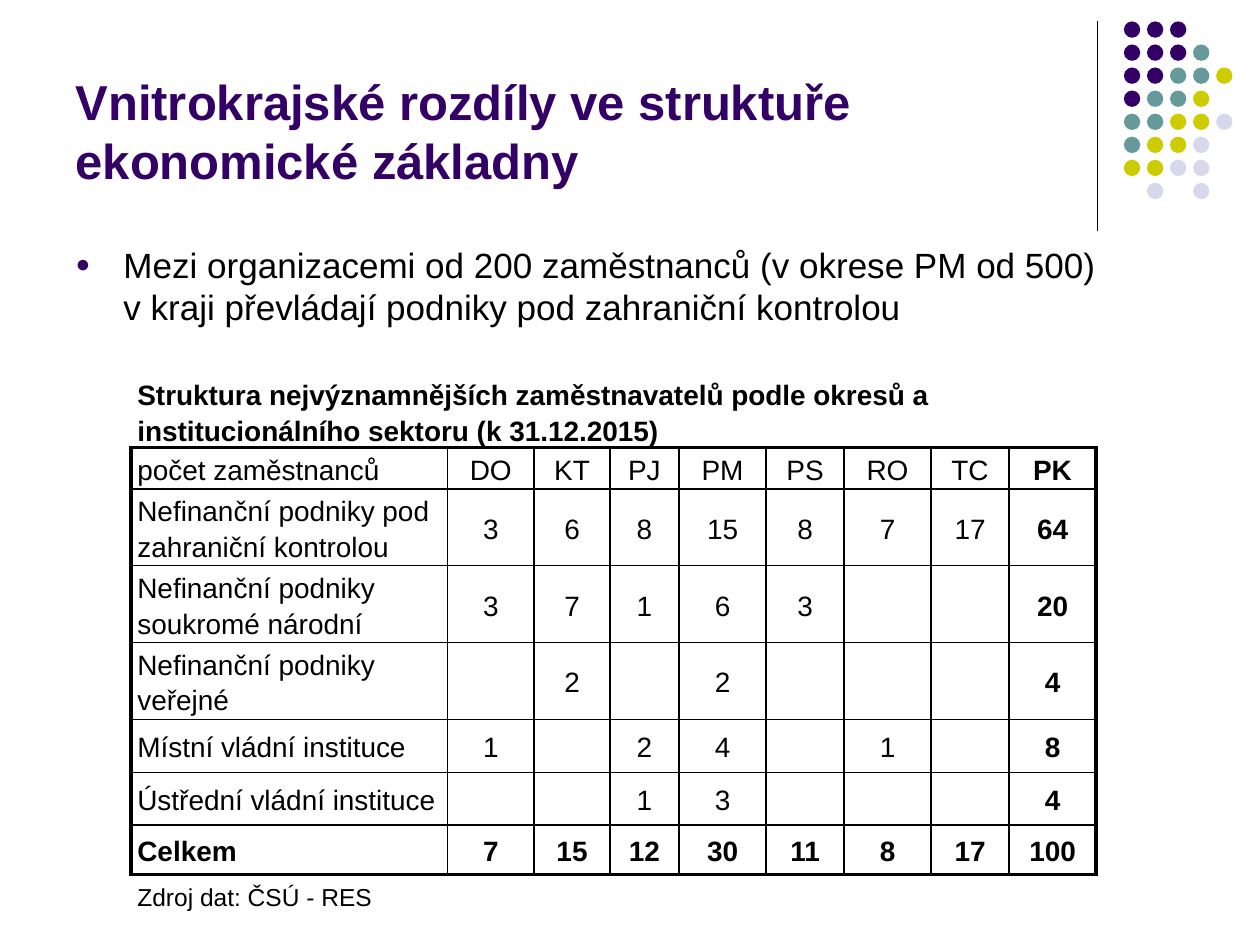
import lxml.etree
import pptx
import pptx.dml.color
import pptx.enum.shapes
import pptx.enum.text
import pptx.oxml.ns
import pptx.util

Inches = pptx.util.Inches
Pt = pptx.util.Pt
ALIGN = pptx.enum.text.PP_ALIGN
ANCHOR = pptx.enum.text.MSO_ANCHOR

COLORS = {
    "purple": "330066",
    "teal": "669999",
    "yellow": "CCCC00",
    "lavender": "D8D8EC",
    "black": "000000",
}
DOT_COLORS = {"P": "purple", "T": "teal", "Y": "yellow", "L": "lavender"}
DOT_ROWS = ["PPP", "PPPT", "PPTTY", "PTTY", "TTYYL", "TYYL", "YYLL", " L L"]
TITLE = "Vnitrokrajské rozdíly ve struktuře ekonomické základny"
BODY = (
    "Mezi organizacemi od 200 zaměstnanců (v okrese PM od 500) "
    "v kraji převládají podniky pod zahraniční kontrolou"
)
CAPTION = (
    "Struktura nejvýznamnějších zaměstnavatelů podle okresů "
    "a institucionálního sektoru (k 31.12.2015)"
)
SOURCE = "Zdroj dat: ČSÚ - RES"
TABLE_ROWS = [
    [CAPTION],
    ["počet zaměstnanců", "DO", "KT", "PJ", "PM", "PS", "RO", "TC", "PK"],
    ["Nefinanční podniky pod zahraniční kontrolou", "3", "6", "8", "15", "8", "7", "17", "64"],
    ["Nefinanční podniky soukromé národní", "3", "7", "1", "6", "3", "", "", "20"],
    ["Nefinanční podniky veřejné", "", "2", "", "2", "", "", "", "4"],
    ["Místní vládní instituce", "1", "", "2", "4", "", "1", "", "8"],
    ["Ústřední vládní instituce", "", "", "1", "3", "", "", "", "4"],
    ["Celkem", "7", "15", "12", "30", "11", "8", "17", "100"],
    [SOURCE],
]
COLUMN_WIDTHS = [2.51, 0.69, 0.6, 0.55, 0.69, 0.62, 0.69, 0.62, 0.69]
ROW_HEIGHTS = [0.68, 0.33, 0.61, 0.61, 0.61, 0.42, 0.42, 0.39, 0.3]
THIN, THICK = 1, 2.25


def rgb(name):
    """Return the named colour."""
    return pptx.dml.color.RGBColor.from_string(COLORS[name])


def set_values(target, values):
    """Set every attribute in a dict of format values."""
    for name, value in values.items():
        setattr(target, name, value)


def add_element(parent, tag, **attributes):
    """Append a drawing element with its attributes."""
    element = lxml.etree.SubElement(parent, pptx.oxml.ns.qn(tag))
    for name, value in attributes.items():
        element.set(name, str(value))
    return element


def write_text(paragraph, text, size, color="black", bold=False):
    """Add one formatted run to a paragraph."""
    run = paragraph.add_run()
    run.text = text
    set_values(run.font, {"name": "Arial", "size": Pt(size), "bold": bold})
    run.font.color.rgb = rgb(color)


def place(shape, box):
    """Move a shape to a box of left, top, width and height."""
    set_values(shape, dict(zip(("left", "top", "width", "height"), box)))


def fill_title(slide, box):
    """Fill and place the title."""
    title = slide.shapes.title
    place(title, box)
    title.text_frame.vertical_anchor = ANCHOR.BOTTOM
    paragraph = title.text_frame.paragraphs[0]
    paragraph.alignment = ALIGN.LEFT
    write_text(paragraph, TITLE, 28, "purple", True)


def fill_body(slide, box):
    """Fill and place the bulleted body."""
    body = slide.placeholders[1]
    place(body, box)
    paragraph = body.text_frame.paragraphs[0]
    paragraph.space_before = Pt(4)
    write_text(paragraph, BODY, 20)
    properties = paragraph._p.get_or_add_pPr()
    properties.set("marL", str(Inches(0.38)))
    properties.set("indent", str(Inches(-0.38)))
    bullet_color = add_element(properties, "a:buClr")
    add_element(bullet_color, "a:srgbClr", val=COLORS["purple"])
    add_element(properties, "a:buSzPct", val=70000)
    add_element(properties, "a:buFont", typeface="Arial")
    add_element(properties, "a:buChar", char="●")


def add_dots(slide, left, top):
    """Draw the grouped grid of coloured dots."""
    group = slide.shapes.add_group_shape()
    pitch, size = Inches(0.183), Inches(0.13)
    for row, codes in enumerate(DOT_ROWS):
        for column, code in enumerate(codes):
            if code not in DOT_COLORS:
                continue
            dot = group.shapes.add_shape(
                pptx.enum.shapes.MSO_SHAPE.OVAL,
                left + column * pitch, top + row * pitch, size, size,
            )
            dot.shadow.inherit = False
            dot.fill.solid()
            dot.fill.fore_color.rgb = rgb(DOT_COLORS[code])
            dot.line.fill.background()


def add_divider(slide, left, top, height):
    """Draw the vertical line beside the dots."""
    divider = slide.shapes.add_connector(
        pptx.enum.shapes.MSO_CONNECTOR.STRAIGHT, left, top, left, top + height
    )
    divider.line.width = Pt(0.75)
    divider.line.color.rgb = rgb("black")
    add_element(divider._element.spPr, "a:effectLst")


def border_widths(row, column):
    """Return the border widths of a cell by side, with None for no line."""
    last_row, last_column = len(TABLE_ROWS) - 1, len(COLUMN_WIDTHS) - 1
    if row in (0, last_row):
        return {
            "L": None, "R": None,
            "T": THICK if row == last_row else None,
            "B": THICK if row == 0 else None,
        }
    return {
        "L": THICK if column == 0 else THIN,
        "R": THICK if column == last_column else THIN,
        "T": THICK if row == 1 else THIN,
        "B": THICK if row == last_row - 1 else THIN,
    }


def set_borders(cell, widths):
    """Draw the four borders of a cell."""
    properties = cell._tc.get_or_add_tcPr()
    for side, width in widths.items():
        line = add_element(properties, "a:ln" + side, w=Pt(width or 0))
        if width is None:
            add_element(line, "a:noFill")
        else:
            fill = add_element(line, "a:solidFill")
            add_element(fill, "a:srgbClr", val=COLORS["black"])


def add_employer_table(slide, box):
    """Build the employer table with its caption and source rows."""
    row_count, column_count = len(TABLE_ROWS), len(COLUMN_WIDTHS)
    table = slide.shapes.add_table(row_count, column_count, *box).table
    set_values(table, {"first_row": False, "horz_banding": False})
    for column, width in zip(table.columns, COLUMN_WIDTHS):
        column.width = Inches(width)
    for row, height in zip(table.rows, ROW_HEIGHTS):
        row.height = Inches(height)
    for row, texts in enumerate(TABLE_ROWS):
        outer = len(texts) == 1
        if outer:
            table.cell(row, 0).merge(table.cell(row, column_count - 1))
        for column in range(column_count):
            cell = table.cell(row, column)
            set_values(cell, {
                "margin_left": Inches(0.05), "margin_right": Inches(0.05),
                "margin_top": 0, "margin_bottom": 0,
                "vertical_anchor": ANCHOR.BOTTOM if outer else ANCHOR.MIDDLE,
            })
            set_borders(cell, border_widths(row, column))
            cell.fill.background()
            if column < len(texts) and texts[column]:
                paragraph = cell.text_frame.paragraphs[0]
                set_values(paragraph, {
                    "alignment": ALIGN.CENTER if column else ALIGN.LEFT,
                    "line_spacing": 1.15,
                })
                bold = row in (0, row_count - 2) or column == column_count - 1
                size = 14 if row == row_count - 1 else 16
                write_text(paragraph, texts[column], size, bold=bold)


def main():
    """Build and save the presentation."""
    presentation = pptx.Presentation()
    set_values(presentation, {"slide_width": Inches(10), "slide_height": Inches(7.5)})
    slide = presentation.slides.add_slide(presentation.slide_layouts[1])
    add_divider(slide, Inches(8.71), Inches(0.17), Inches(1.66))
    add_dots(slide, Inches(8.92), Inches(0.17))
    fill_title(slide, [Inches(value) for value in (0.5, 0.13, 8.2, 1.42)])
    fill_body(slide, [Inches(value) for value in (0.5, 1.88, 8.35, 0.67)])
    add_employer_table(slide, [Inches(value) for value in (1.04, 2.87, 7.66, 4.37)])
    presentation.save("out.pptx")


if __name__ == "__main__":
    main()
